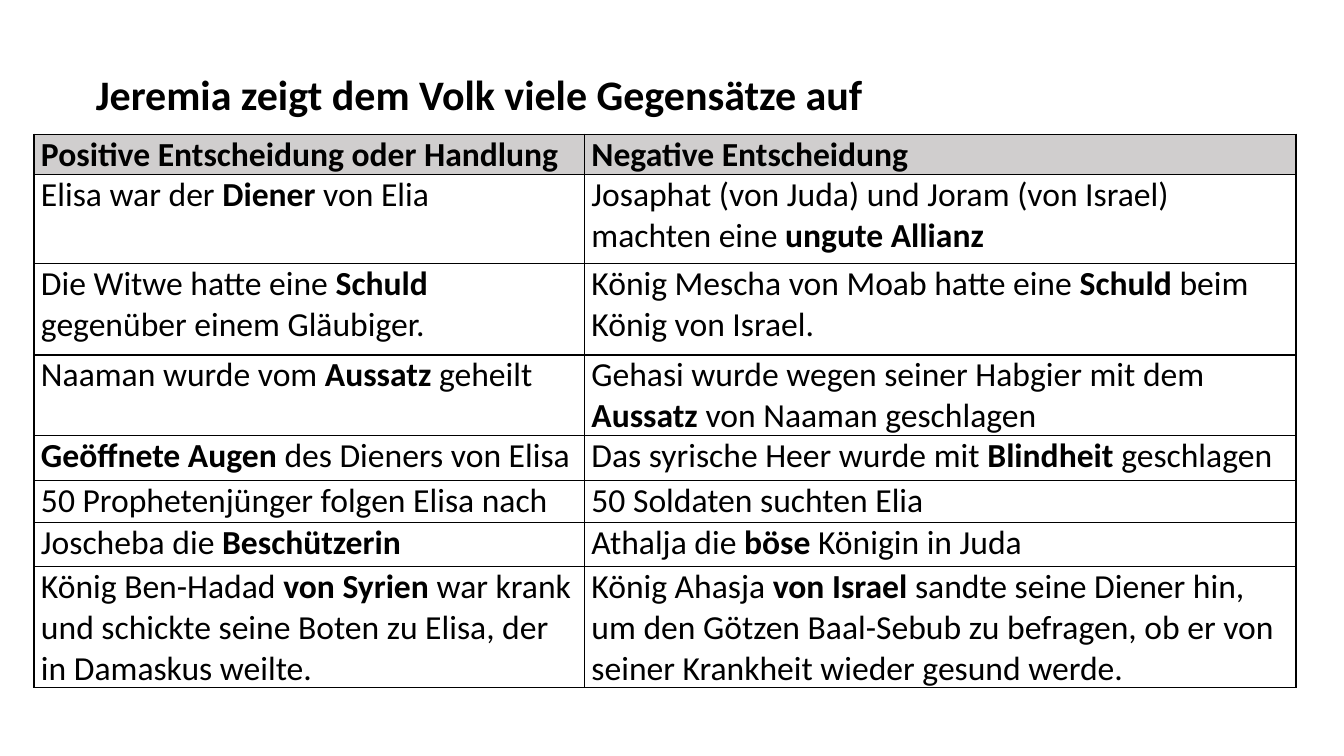
from pptx import Presentation
from pptx.dml.color import RGBColor
from pptx.enum.text import MSO_ANCHOR as Anchor, MSO_AUTO_SIZE as AutoSize, PP_ALIGN as Align
from pptx.oxml import parse_xml
from pptx.oxml.ns import nsdecls
from pptx.util import Pt

COLORS = {"ink": "000000", "header": "D0CECE"}

# Text between double asterisks is bold
CONTRASTS = [
    ("**Positive Entscheidung oder Handlung**", "**Negative Entscheidung**"),
    ("Elisa war der **Diener** von Elia",
     "Josaphat (von Juda) und Joram (von Israel) machten eine **ungute Allianz**"),
    ("Die Witwe hatte eine **Schuld** gegenüber einem Gläubiger.",
     "König Mescha von Moab hatte eine **Schuld** beim König von Israel."),
    ("Naaman wurde vom **Aussatz** geheilt",
     "Gehasi wurde wegen seiner Habgier mit dem **Aussatz** von Naaman geschlagen"),
    ("**Geöffnete Augen** des Dieners von Elisa",
     "Das syrische Heer wurde mit **Blindheit** geschlagen"),
    ("50 Prophetenjünger folgen Elisa nach", "50 Soldaten suchten Elia"),
    ("Joscheba die **Beschützerin**", "Athalja die **böse** Königin in Juda"),
    ("König Ben-Hadad **von Syrien **war krank und schickte seine Boten zu Elisa, "
     "der in Damaskus weilte.",
     "König Ahasja **von Israel **sandte seine Diener hin, um den Götzen Baal-Sebub "
     "zu befragen, ob er von seiner Krankheit wieder gesund werde."),
]
ROW_HEIGHTS = [24.5, 63.5, 65.5, 49, 31.7, 30.2, 31.7, 73.4]
COLUMN_WIDTHS = [393.2, 508.2]


class SlideBuilder:
    """Holds the style and the current slide."""

    font_name = "Calibri"

    def __init__(self, deck):
        self.slide = deck.slides.add_slide(deck.slide_layouts[5])

    def style(self, paragraph, size):
        paragraph.font.name = self.font_name
        paragraph.font.size = Pt(size)
        paragraph.font.color.rgb = RGBColor.from_string(COLORS["ink"])

    def title(self, text, left, top, width, height):
        heading = self.slide.shapes.title
        heading.left, heading.top = Pt(left), Pt(top)
        heading.width, heading.height = Pt(width), Pt(height)
        frame = heading.text_frame
        frame.text = text
        frame.word_wrap = True
        frame.auto_size = AutoSize.SHAPE_TO_FIT_TEXT
        frame.vertical_anchor = Anchor.TOP
        line = frame.paragraphs[0]
        line.alignment = Align.LEFT
        line.line_spacing = 1.07
        line.space_before = Pt(12)
        self.style(line, 30)
        line.font.bold = True

    def borders(self, cell, width):
        properties = cell._tc.get_or_add_tcPr()
        for side in ("lnL", "lnR", "lnT", "lnB"):
            properties.append(parse_xml(
                f'<a:{side} {nsdecls("a")} w="{Pt(width)}"><a:solidFill>'
                f'<a:srgbClr val="{COLORS["ink"]}"/></a:solidFill></a:{side}>'))

    def cell(self, cell, text, header):
        cell.margin_left = cell.margin_right = Pt(5)
        cell.margin_top = cell.margin_bottom = 0
        self.borders(cell, 1)
        if header:
            cell.fill.solid()
            cell.fill.fore_color.rgb = RGBColor.from_string(COLORS["header"])
        else:
            cell.fill.background()
        entry = cell.text_frame.paragraphs[0]
        self.style(entry, 24)
        for index, part in enumerate(text.split("**")):
            if part:
                run = entry.add_run()
                run.text = part
                run.font.bold = index % 2 == 1

    def table(self, rows, left, top, widths, heights):
        grid = self.slide.shapes.add_table(
            len(rows), len(widths), Pt(left), Pt(top),
            Pt(sum(widths)), Pt(sum(heights))).table
        grid.first_row = grid.horz_banding = False
        for column, width in zip(grid.columns, widths):
            column.width = Pt(width)
        for r, (texts, height) in enumerate(zip(rows, heights)):
            grid.rows[r].height = Pt(height)
            for c, text in enumerate(texts):
                self.cell(grid.cell(r, c), text, header=r == 0)


def main():
    deck = Presentation()
    deck.slide_width, deck.slide_height = Pt(960), Pt(540)
    builder = SlideBuilder(deck)

    # Heading
    builder.title("Jeremia zeigt dem Volk viele Gegensätze auf", 61.2, 42.5, 795.6, 44.6)

    # Contrasting decisions
    builder.table(CONTRASTS, 24.3, 95.8, COLUMN_WIDTHS, ROW_HEIGHTS)

    deck.save("out.pptx")


if __name__ == "__main__":
    main()
